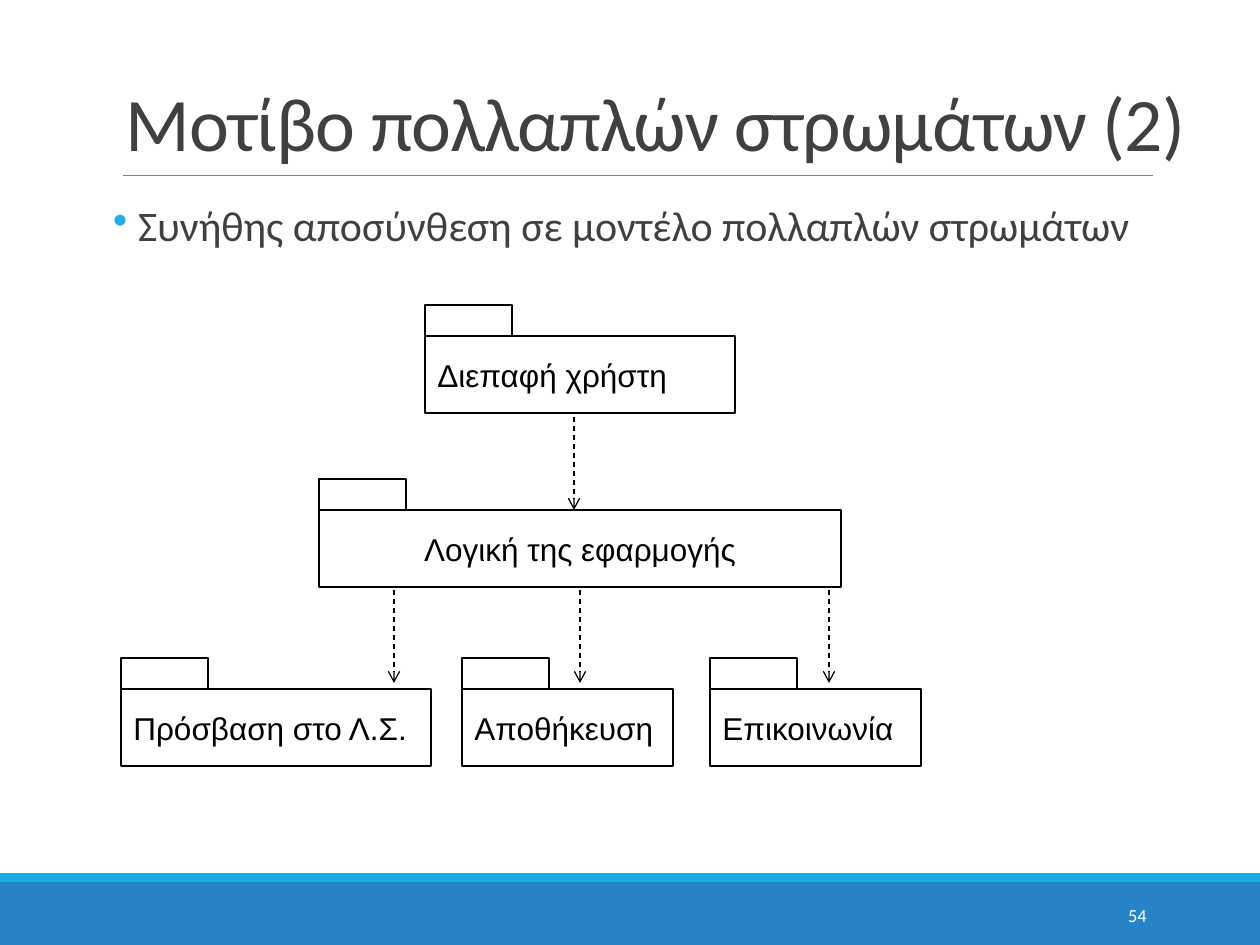
from dataclasses import dataclass

from lxml import etree
from pptx import Presentation
from pptx.dml.color import RGBColor
from pptx.enum.dml import MSO_LINE
from pptx.enum.shapes import MSO_CONNECTOR, MSO_SHAPE
from pptx.enum.text import MSO_ANCHOR, MSO_AUTO_SIZE, PP_ALIGN
from pptx.oxml.ns import qn
from pptx.util import Emu, Pt

RECT = MSO_SHAPE.RECTANGLE
STRAIGHT = MSO_CONNECTOR.STRAIGHT
DASH = MSO_LINE.DASH
LEFT, CENTER, RIGHT = PP_ALIGN.LEFT, PP_ALIGN.CENTER, PP_ALIGN.RIGHT
MIDDLE, BOTTOM = MSO_ANCHOR.MIDDLE, MSO_ANCHOR.BOTTOM
NO_AUTOFIT = MSO_AUTO_SIZE.NONE

PX_PER_INCH = 126
BLACK, WHITE, GREY, TEXT = "000000", "FFFFFF", "808080", "404040"
BLUE, CYAN = "2683C6", "1CADE4"
TAB_W, TAB_H, BOX_H = 87, 31, 77


@dataclass
class Package:
    label: str
    x: int
    y: int
    w: int
    align: PP_ALIGN = LEFT


@dataclass
class Arrow:
    x: int
    top: int
    bottom: int


PACKAGES = [
    Package("Διεπαφή χρήστη", 425, 336, 310),
    Package("Λογική της εφαρμογής", 319, 510, 522, CENTER),
    Package("Πρόσβαση στο Λ.Σ.", 121, 689, 310),
    Package("Αποθήκευση", 462, 689, 211),
    Package("Επικοινωνία", 710, 689, 211),
]
ARROWS = [Arrow(574, 417, 510)] + [Arrow(x, 590, 683) for x in (394, 580, 829)]


def px(n: int) -> Emu:
    return Emu(round(n * 914400 / PX_PER_INCH))


def rgb(color: str) -> RGBColor:
    return RGBColor.from_string(color)


def write(sp, text: str, font: str, size: float, color: str, align=LEFT, anchor=None):
    tf = sp.text_frame
    tf.word_wrap = True
    tf.auto_size = NO_AUTOFIT
    if anchor is not None:
        tf.vertical_anchor = anchor
    p = tf.paragraphs[0]
    p.text = text
    p.alignment = align
    p.font.name = font
    p.font.size = Pt(size)
    p.font.color.rgb = rgb(color)
    return p


def add_rect(s, x: int, y: int, w: int, h: int, fill=None, line_pt=None):
    sp = s.shapes.add_shape(RECT, px(x), px(y), px(w), px(h))
    sp.shadow.inherit = False
    if fill:
        sp.fill.solid()
        sp.fill.fore_color.rgb = rgb(fill)
    else:
        sp.fill.background()
    if line_pt:
        sp.line.color.rgb = rgb(BLACK)
        sp.line.width = Pt(line_pt)
    else:
        sp.line.fill.background()
    return sp


def add_line(s, x1: int, y1: int, x2: int, y2: int, color: str, width: float):
    line = s.shapes.add_connector(STRAIGHT, px(x1), px(y1), px(x2), px(y2))
    line.line.color.rgb = rgb(color)
    line.line.width = Pt(width)
    etree.SubElement(line._element.spPr, qn("a:effectLst"))
    return line


def add_package(s, package: Package) -> None:
    sp = add_rect(s, package.x, package.y, package.w, BOX_H, line_pt=1)
    write(sp, package.label, "Arial", 18, BLACK, package.align, MIDDLE)
    add_rect(s, package.x, package.y - TAB_H, TAB_W, TAB_H, line_pt=0.75)


def add_arrow(s, arrow: Arrow) -> None:
    line = add_line(s, arrow.x, arrow.top, arrow.x, arrow.bottom, BLACK, 0.75).line
    line.dash_style = DASH
    etree.SubElement(line._get_or_add_ln(), qn("a:tailEnd"), type="arrow")


def add_title(s, text: str) -> None:
    sp = s.shapes.title
    sp.left, sp.top, sp.width, sp.height = px(113), px(14), px(1118), px(159)
    p = write(sp, text, "Calibri", 43.2, TEXT, anchor=BOTTOM)
    p.line_spacing = 0.85
    p.runs[0]._r.get_or_add_rPr().set("spc", "-50")


def add_bullet(s, text: str) -> None:
    sp = s.shapes.add_textbox(px(113), px(199), px(1040), px(664))
    sp.text_frame.margin_left = sp.text_frame.margin_right = 0
    p = write(sp, text, "Calibri", 24, TEXT)
    p.line_spacing = 0.9
    p.space_before, p.space_after = Pt(12), Pt(2)
    pPr = p._p.get_or_add_pPr()
    pPr.set("marL", str(px(25)))
    pPr.set("indent", str(-px(25)))
    bullet_color = etree.Element(qn("a:buClr"))
    etree.SubElement(bullet_color, qn("a:srgbClr"), val=CYAN)
    bullet = etree.Element(qn("a:buChar"), char="•")
    defaults = pPr.find(qn("a:defRPr"))
    for element in (bullet_color, bullet):
        defaults.addprevious(element)


def main() -> None:
    prs = Presentation()
    prs.slide_width, prs.slide_height = px(1260), px(945)
    s = prs.slides.add_slide(prs.slide_layouts[5])

    add_rect(s, 0, 882, 1260, 63, fill=BLUE)
    add_rect(s, 0, 873, 1260, 9, fill=CYAN)
    add_line(s, 123, 175, 1153, 175, GREY, 0.5)
    add_title(s, "Μοτίβο πολλαπλών στρωμάτων (2)")
    add_bullet(s, "Συνήθης αποσύνθεση σε μοντέλο πολλαπλών στρωμάτων")

    number = s.shapes.add_textbox(px(1023), px(890), px(136), px(50))
    write(number, "54", "Calibri", 10.5, WHITE, RIGHT, MIDDLE)

    for package in PACKAGES:
        add_package(s, package)
    for arrow in ARROWS:
        add_arrow(s, arrow)

    prs.save("out.pptx")


if __name__ == "__main__":
    main()
